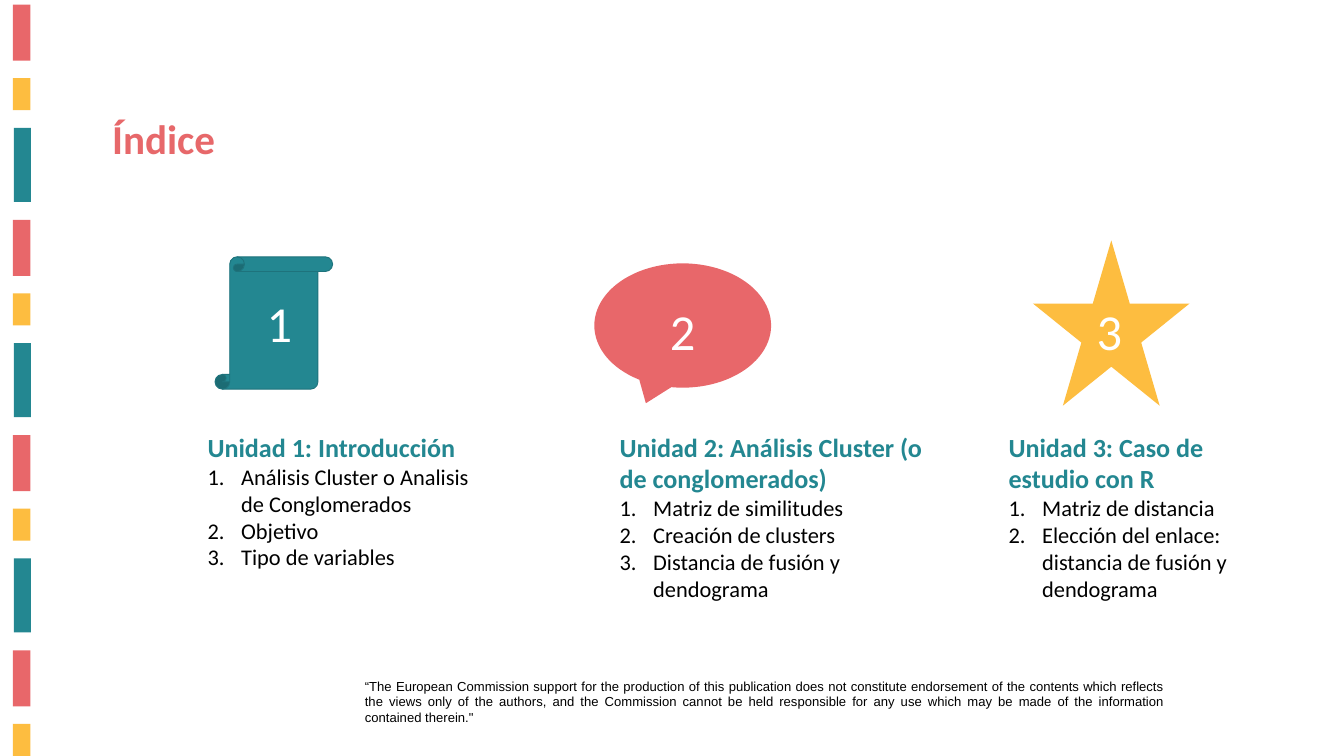
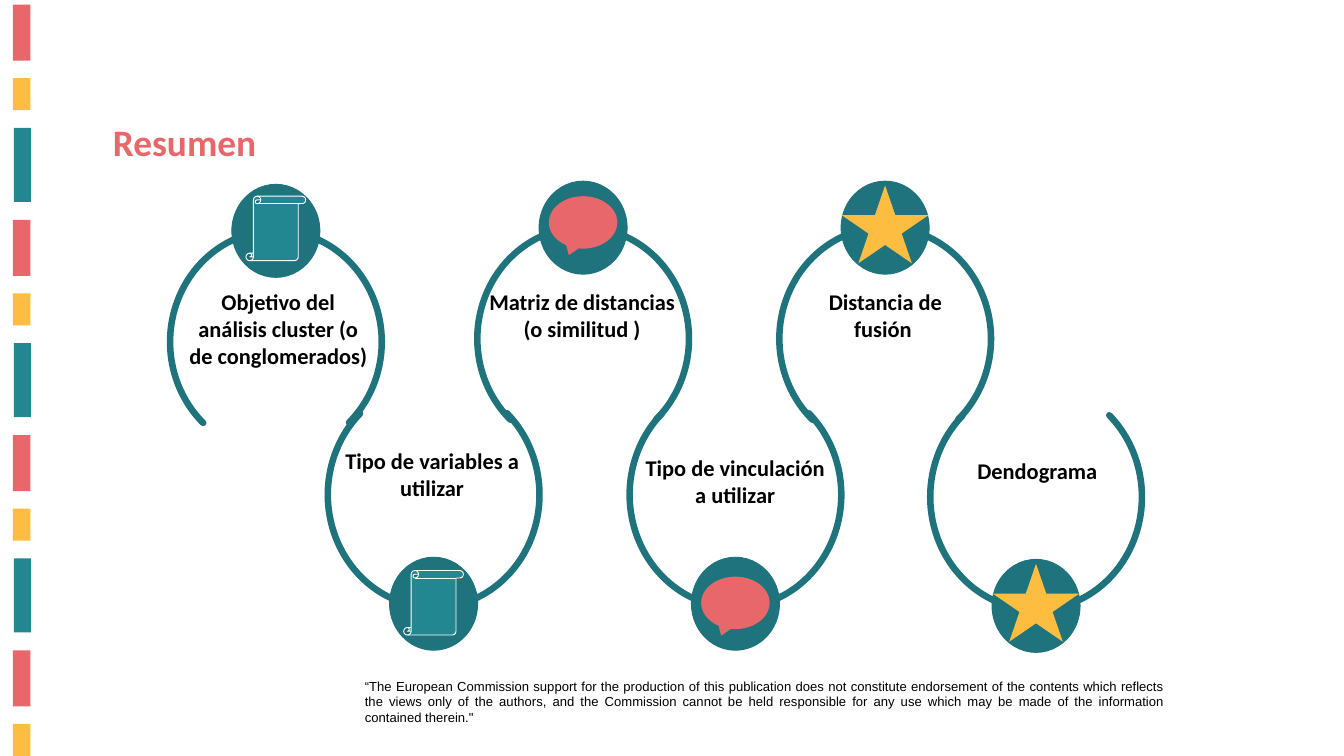
from pptx import Presentation
from pptx.dml.color import RGBColor
from pptx.enum.shapes import MSO_SHAPE as SHAPE
from pptx.enum.text import MSO_ANCHOR as ANCHOR, MSO_AUTO_SIZE as AUTO, PP_ALIGN as ALIGN
from pptx.oxml.ns import qn
from pptx.util import Pt
from lxml.etree import SubElement

W, H = 1440, 810
COLORS = {
    "red": "E8676A",
    "title": "E7686A",
    "yellow": "FDBD40",
    "teal": "238791",
    "dark": "1E737C",
    "white": "FFFFFF",
    "black": "000000",
}
FORMATS = {
    "title": {"name": "Calibri", "bold": True},
    "heading": {"name": "Calibri", "size": Pt(28), "bold": True},
    "item": {"name": "Calibri", "size": Pt(24), "bold": False},
    "number": {"name": "Calibri", "size": Pt(54)},
    "step": {"name": "Calibri", "size": Pt(24), "bold": True},
    "footer": {"name": "Arial", "size": Pt(14)},
}
BAND_PITCH = 230.6
BANDS = [
    ("red", 13.9, 5, 18.7, 60),
    ("yellow", 13.9, 83.7, 18.7, 34.4),
    ("teal", 15, 137, 18, 79.3),
]
FOOTER = (
    "“The European Commission support for the production of this publication does not "
    "constitute endorsement of the contents which reflects the views only of the authors, "
    "and the Commission cannot be held responsible for any use which may be made of the "
    "information contained therein.\""
)
UNITS = [
    ((215.3, 300), "Unidad 1: Introducción",
     ["Análisis Cluster o Analisis de Conglomerados", "Objetivo", "Tipo de variables"]),
    ((656.8, 351.4), "Unidad 2: Análisis Cluster (o de conglomerados)",
     ["Matriz de similitudes", "Creación de clusters", "Distancia de fusión y dendograma"]),
    ((1073.5, 296), "Unidad 3: Caso de estudio con R",
     ["Matriz de distancia", "Elección del enlace: distancia de fusión y dendograma"]),
]
UNIT_ICONS = [
    (SHAPE.VERTICAL_SCROLL, (230.4, 275.2, 126, 141.8), "teal", "dark", (278.6, 309.6, 113.8, 72.7)),
    (SHAPE.OVAL_CALLOUT, (636.8, 282.2, 189.4, 133.2), "red", None, (710.6, 317.5, 77.8, 72.7)),
    (SHAPE.STAR_5_POINT, (1106.8, 257.6, 167.8, 177.1), "yellow", None, (1167.8, 317.5, 108, 72.7)),
]
STEP_ICONS = {
    "scroll": (SHAPE.VERTICAL_SCROLL, 64.1, 69.1, "teal", "white"),
    "callout": (SHAPE.OVAL_CALLOUT, 73.4, 56.2, "red", None),
    "star": (SHAPE.STAR_5_POINT, 92.9, 83.5, "yellow", None),
}
STEPS = [
    ("Objetivo del análisis cluster (o de conglomerados)",
     (182.2, 246.8), "scroll", 210.2, (193.7, 305.3, 208.8, 94.3)),
    ("Tipo de variables a utilizar",
     (351.2, 409), "scroll", 611.3, (352.1, 475.9, 221.8, 94.3)),
    ("Matriz de distancias (o similitud )",
     (511.4, 243.4), "callout", 210.2, (512.8, 305.3, 221.8, 65.5)),
    ("Tipo de vinculación a utilizar",
     (674.6, 409), "callout", 617.8, (683.3, 483.1, 208.8, 65.5)),
    ("Distancia de fusión ",
     (835, 243.4), "star", 198.7, (849.6, 305.3, 198, 65.5)),
    ("Dendograma",
     (996.7, 411.3), "star", 604.1, (1000.1, 486, 222.5, 36)),
]


def rgb(name):
    return RGBColor.from_string(COLORS[name])


def add_run(p, text, fmt, color):
    r = p.add_run()
    r.text = text
    for key, value in fmt.items():
        setattr(r.font, key, value)
    r.font.color.rgb = rgb(color)


def add_box(slide, box):
    sp = slide.shapes.add_textbox(*map(Pt, box))
    sp.text_frame.word_wrap = True
    return sp


def add_label(slide, box, text, style, color, align=ALIGN.LEFT):
    sp = add_box(slide, box)
    p = sp.text_frame.paragraphs[0]
    p.alignment = align
    add_run(p, text, FORMATS[style], color)
    return sp


def add_figure(shapes, kind, box, fill=None, line=None, width=1):
    sp = shapes.add_shape(kind, *map(Pt, box))
    sp.shadow.inherit = False
    if fill:
        sp.fill.solid()
        sp.fill.fore_color.rgb = rgb(fill)
    else:
        sp.fill.background()
    if line:
        sp.line.color.rgb = rgb(line)
        sp.line.width = Pt(width)
    else:
        sp.line.fill.background()
    return sp


def add_title_slide(prs, layout, text, box, size):
    slide = prs.slides.add_slide(layout)
    title = slide.shapes.title
    title.left, title.top, title.width, title.height = map(Pt, box)
    tf = title.text_frame
    tf.auto_size = AUTO.NONE
    tf.word_wrap = True
    tf.vertical_anchor = ANCHOR.TOP
    p = tf.paragraphs[0]
    p.alignment = ALIGN.LEFT
    add_run(p, text, {**FORMATS["title"], "size": Pt(size)}, "title")
    return slide


def decorate_layout(layout, slide):
    for ph in list(layout.placeholders):
        if ph.placeholder_format.idx:
            ph.element.getparent().remove(ph.element)
    parts = []
    for i in range(4):
        for color, x, y, w, h in BANDS:
            top = y + i * BAND_PITCH
            if top < H:
                parts.append(add_figure(slide.shapes, SHAPE.RECTANGLE, (x, top, w, h), color))
    footer = add_label(slide, (383.8, 722.9, 871, 58.3), FOOTER, "footer", "black", ALIGN.JUSTIFY)
    for sp in parts + [footer]:
        layout.shapes.element.append(sp.element)


def add_unit(slide, column, heading, items):
    x, w = column
    tf = add_box(slide, (x, 458.8, w, 191.5)).text_frame
    add_run(tf.paragraphs[0], heading, FORMATS["heading"], "teal")
    for item in items:
        p = tf.add_paragraph()
        pPr = p._p.get_or_add_pPr()
        pPr.set("marL", str(Pt(36)))
        pPr.set("indent", str(-Pt(36)))
        SubElement(pPr, qn("a:buAutoNum"), type="arabicPeriod")
        add_run(p, item, FORMATS["item"], "black")


def add_step(slide, text, origin, icon, icon_top, text_box):
    x, y = origin
    below = y > H / 2
    group = slide.shapes.add_group_shape()
    arc = add_figure(group.shapes, SHAPE.ARC, (x, y, 226.8, 242 if below else 239),
                     line="dark", width=7)
    arc.adjustments[0] = 79.14
    arc.adjustments[1] = 28.68
    arc.rotation = 180 if below else 0
    arc.line._get_or_add_ln().set("cap", "rnd")
    circle_x, circle_w = x + 66.2, 94.3
    circle_y = y + (188 if below else -49.3)
    add_figure(group.shapes, SHAPE.OVAL, (circle_x, circle_y, circle_w, 99.7), "dark", "dark")
    kind, w, h, fill, line = STEP_ICONS[icon]
    add_figure(slide.shapes, kind, (circle_x + (circle_w - w) / 2, icon_top, w, h), fill, line)
    add_label(slide, text_box, text, "step", "black", ALIGN.CENTER)


def main():
    prs = Presentation()
    prs.slide_width, prs.slide_height = Pt(W), Pt(H)
    layout = prs.slide_layouts[5]

    index = add_title_slide(prs, layout, "Índice", (113, 118, 487.4, 60.5), 44)
    decorate_layout(layout, index)
    for unit in UNITS:
        add_unit(index, *unit)
    for number, (kind, box, fill, line, label_box) in enumerate(UNIT_ICONS, 1):
        add_figure(index.shapes, kind, box, fill, line)
        add_label(index, label_box, str(number), "number", "white")

    summary = add_title_slide(prs, layout, "Resumen", (113.8, 123.8, 473.8, 55.4), 40)
    for step in STEPS:
        add_step(summary, *step)

    prs.save("out.pptx")


if __name__ == "__main__":
    main()
